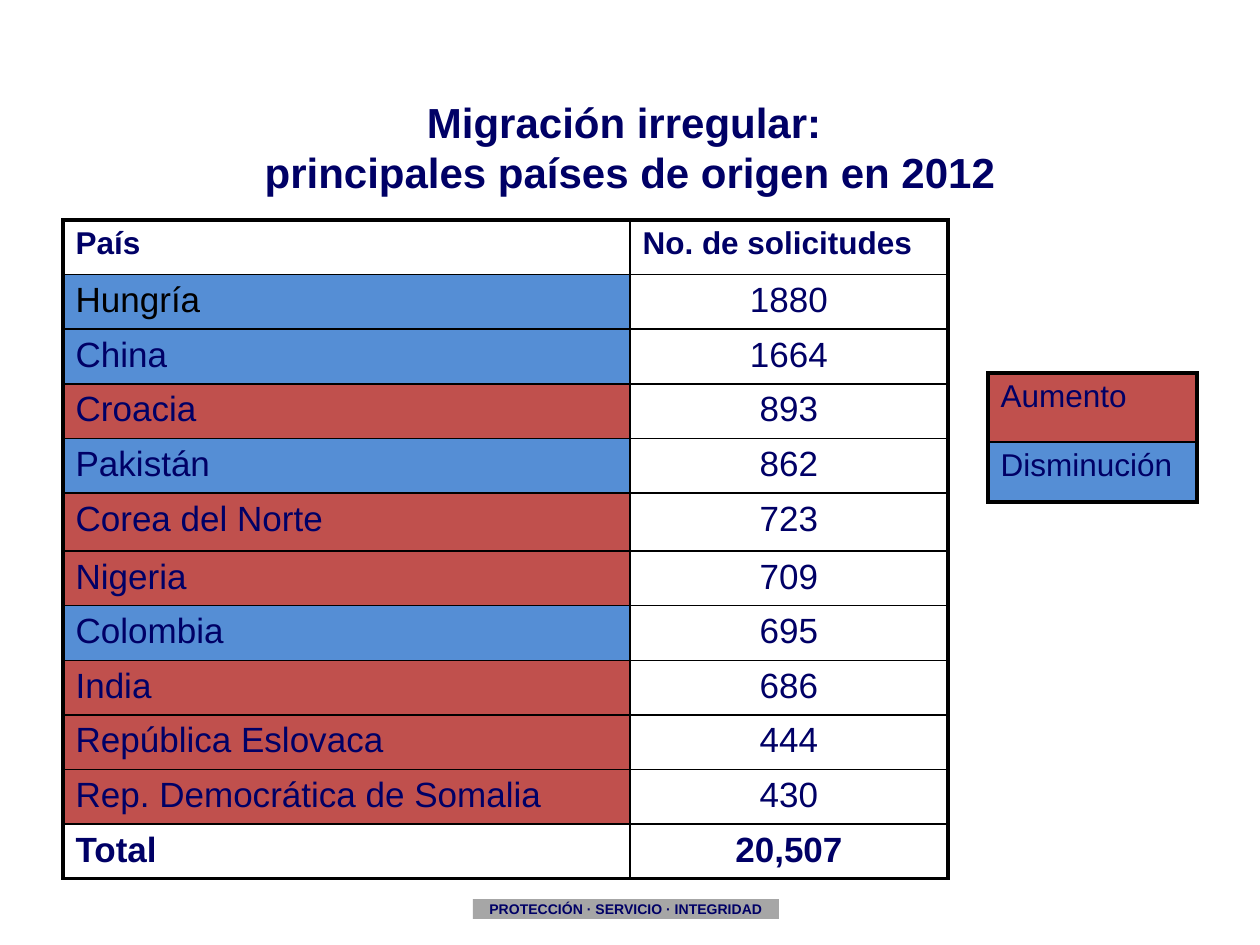
from dataclasses import dataclass

from lxml import etree
from pptx import Presentation
from pptx import util as u
from pptx.dml.color import RGBColor
from pptx.enum import shapes, text
from pptx.oxml.ns import qn

PX = u.Inches(1) / 126


@dataclass(frozen=True)
class Theme:
    font: str = "Arial"
    navy: str = "000066"
    black: str = "000000"
    white: str = "FFFFFF"
    grey: str = "A6A6A6"
    up: str = "C0504D"
    down: str = "558ED5"
    title: int = 24
    body: int = 20
    label: int = 18
    motto: int = 8
    inner: float = 1
    outer: float = 2.25


T = Theme()
HEADER = ("País", "No. de solicitudes")
COUNTRIES = [
    ("Hungría", "1880", T.down),
    ("China", "1664", T.down),
    ("Croacia", "893", T.up),
    ("Pakistán", "862", T.down),
    ("Corea del Norte", "723", T.up),
    ("Nigeria", "709", T.up),
    ("Colombia", "695", T.down),
    ("India", "686", T.up),
    ("República Eslovaca", "444", T.up),
    ("Rep. Democrática de Somalia", "430", T.up),
]
TOTAL = ("Total", "20,507")


def emu(*lengths):
    return [u.Emu(round(n * PX)) for n in lengths]


def add_run(p, words, size, color=T.navy, bold=False):
    r = p.add_run()
    r.text = words
    r.font.name, r.font.size, r.font.bold = T.font, u.Pt(size), bold
    r.font.color.rgb = RGBColor.from_string(color)


def set_borders(cell, widths):
    """Draw the left, right, top and bottom edges, in that order, in points."""
    tcPr = cell._tc.get_or_add_tcPr()
    for i, (side, width) in enumerate(zip("LRTB", widths)):
        ln = etree.Element(qn(f"a:ln{side}"), w=str(u.Pt(width)))
        fill = etree.SubElement(ln, qn("a:solidFill"))
        etree.SubElement(fill, qn("a:srgbClr"), val=T.black)
        tcPr.insert(i, ln)


def add_grid(s, box, widths, heights):
    """Add a plain table with a heavy frame and thin inner lines."""
    rows, cols = len(heights), len(widths)
    tb = s.shapes.add_table(rows, cols, *emu(*box)).table
    tb.first_row = tb.horz_banding = False
    for col, width in zip(tb.columns, emu(*widths)):
        col.width = width
    for row, height in zip(tb.rows, emu(*heights)):
        row.height = height
    for i in range(rows):
        for j in range(cols):
            on_frame = (j == 0, j == cols - 1, i == 0, i == rows - 1)
            set_borders(tb.cell(i, j), [T.outer if edge else T.inner for edge in on_frame])
    return tb


def fill_cell(cell, words, size, fill=None, color=T.navy, bold=False, centred=False):
    if fill:
        cell.fill.solid()
        cell.fill.fore_color.rgb = RGBColor.from_string(fill)
    else:
        cell.fill.background()
    p = cell.text_frame.paragraphs[0]
    p.alignment = text.PP_ALIGN.CENTER if centred else text.PP_ALIGN.LEFT
    add_run(p, words, size, color, bold)


def add_title(s, box):
    sp = s.shapes.title
    sp.left, sp.top, sp.width, sp.height = emu(*box)
    tf = sp.text_frame
    tf.auto_size = text.MSO_AUTO_SIZE.NONE
    tf.vertical_anchor = text.MSO_ANCHOR.MIDDLE
    p = tf.paragraphs[0]
    p.alignment = text.PP_ALIGN.CENTER
    add_run(p, "Migración irregular: ", T.title, bold=True)
    p.add_line_break()
    add_run(p, "principales países de origen en 2012", T.title, bold=True)


def add_country_table(s, box):
    country_w, tall_row = 567, 58
    count = len(COUNTRIES) + 2
    heights = [(box[3] - tall_row) / (count - 1)] * count
    heights[5] = tall_row
    tb = add_grid(s, box, [country_w, box[2] - country_w], heights)
    for j, words in enumerate(HEADER):
        fill_cell(tb.cell(0, j), words, T.label, bold=True)
    for i, (country, requests, trend) in enumerate(COUNTRIES, 1):
        color = T.black if i == 1 else T.navy
        fill_cell(tb.cell(i, 0), country, T.body, trend, color)
        fill_cell(tb.cell(i, 1), requests, T.body, centred=True)
    for j, words in enumerate(TOTAL):
        fill_cell(tb.cell(count - 1, j), words, T.body, bold=True, centred=j == 1)


def add_legend(s, box):
    first_h = 69
    tb = add_grid(s, box, [box[2]], [first_h, box[3] - first_h])
    for i, (words, trend) in enumerate([("Aumento", T.up), ("Disminución", T.down)]):
        fill_cell(tb.cell(i, 0), words, T.label, trend)


def add_motto(s, box):
    sp = s.shapes.add_shape(shapes.MSO_SHAPE.RECTANGLE, *emu(*box))
    sp.shadow.inherit = False
    sp.fill.solid()
    sp.fill.fore_color.rgb = RGBColor.from_string(T.grey)
    sp.line.fill.background()
    tf = sp.text_frame
    tf.margin_left = tf.margin_right = tf.margin_top = tf.margin_bottom = 0
    tf.vertical_anchor = text.MSO_ANCHOR.MIDDLE
    p = tf.paragraphs[0]
    p.alignment = text.PP_ALIGN.CENTER
    add_run(p, "PROTECCIÓN · SERVICIO · INTEGRIDAD", T.motto, bold=True)


def main():
    prs = Presentation()
    prs.slide_width, prs.slide_height = emu(1260, 945)
    s = prs.slides.add_slide(prs.slide_layouts[5])
    s.background.fill.solid()
    s.background.fill.fore_color.rgb = RGBColor.from_string(T.white)
    add_title(s, (63, 106, 1134, 81))
    add_country_table(s, (63, 220, 885, 659))
    add_legend(s, (988, 373, 209, 129))
    add_motto(s, (473, 899, 306, 20))
    prs.save("out.pptx")


if __name__ == "__main__":
    main()
